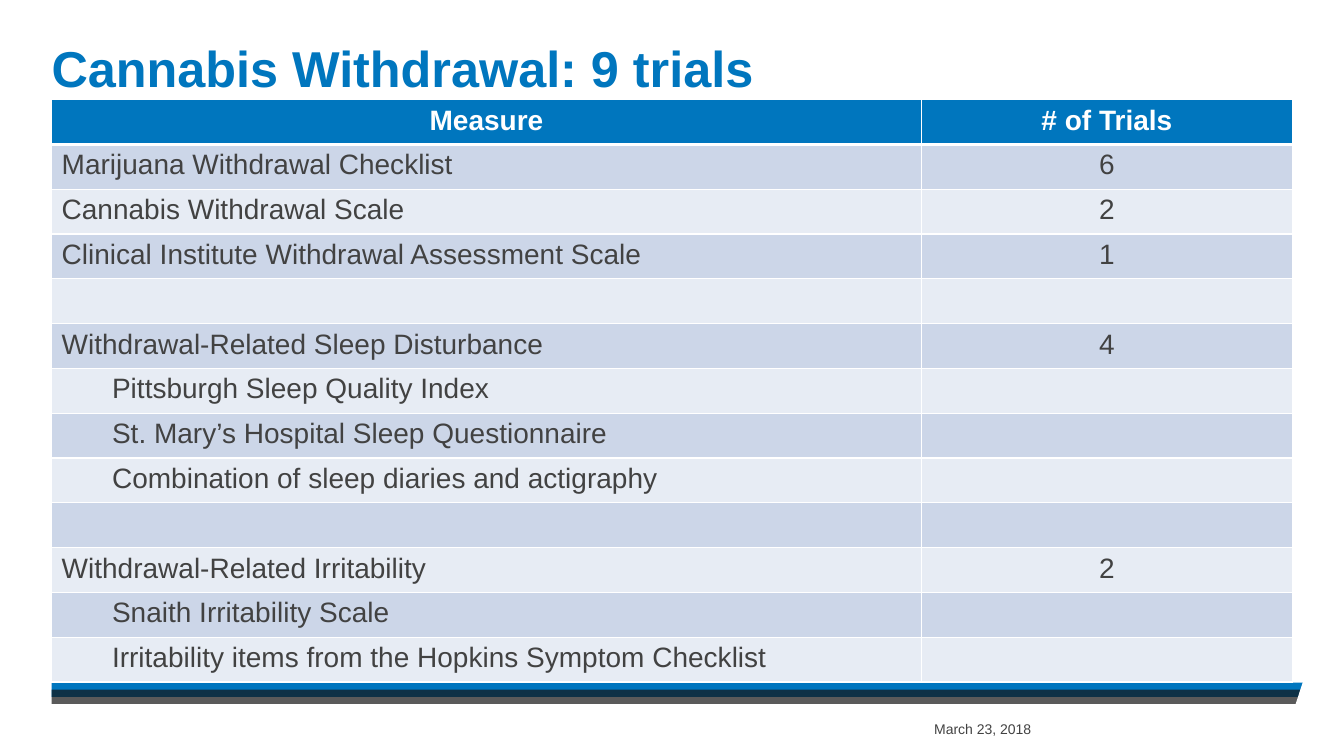
from dataclasses import dataclass

from lxml import etree
from pptx import Presentation
from pptx.dml.color import RGBColor
from pptx.enum.shapes import MSO_SHAPE
from pptx.enum.text import MSO_ANCHOR, PP_ALIGN
from pptx.oxml.ns import qn
from pptx.util import Cm, Pt

RECTANGLE = MSO_SHAPE.RECTANGLE
LEFT, CENTER = PP_ALIGN.LEFT, PP_ALIGN.CENTER
TOP, MIDDLE = MSO_ANCHOR.TOP, MSO_ANCHOR.MIDDLE


@dataclass(frozen=True)
class Theme:
    font: str = "Arial"
    blue: str = "0076BE"
    shade: str = "141414"
    white: str = "FFFFFF"
    ink: str = "424242"
    bands: tuple = ("CCD6E8", "E7ECF4")
    title_size: int = 36
    table_size: int = 20
    date_size: int = 10


THEME = Theme()

HEADER = ("Measure", "# of Trials")
# Measure, number of trials, indent level
MEASURES = [
    ("Marijuana Withdrawal Checklist", "6", 0),
    ("Cannabis Withdrawal Scale", "2", 0),
    ("Clinical Institute Withdrawal Assessment Scale", "1", 0),
    ("", "", 0),
    ("Withdrawal-Related Sleep Disturbance", "4", 0),
    ("Pittsburgh Sleep Quality Index", "", 1),
    ("St. Mary’s Hospital Sleep Questionnaire", "", 1),
    ("Combination of sleep diaries and actigraphy", "", 1),
    ("", "", 0),
    ("Withdrawal-Related Irritability", "2", 0),
    ("Snaith Irritability Scale", "", 1),
    ("Irritability items from the Hopkins Symptom Checklist", "", 1),
]


def write(paragraph, text, size, color, bold=False, align=LEFT):
    paragraph.alignment = align
    run = paragraph.add_run()
    run.text = text
    formats = {"name": THEME.font, "size": Pt(size), "bold": bold}
    for attribute, value in formats.items():
        setattr(run.font, attribute, value)
    run.font.color.rgb = RGBColor.from_string(color)


def add_label(slide, box, anchor):
    """Add an empty text box without margins and return its first paragraph."""
    frame = slide.shapes.add_textbox(*map(Cm, box)).text_frame
    formats = {"word_wrap": True, "vertical_anchor": anchor, "margin_left": 0,
               "margin_top": 0, "margin_right": 0, "margin_bottom": 0}
    for attribute, value in formats.items():
        setattr(frame, attribute, value)
    return frame.paragraphs[0]


def add_title(slide, box):
    title = add_label(slide, box, TOP)
    title.line_spacing = 0.85
    write(title, "Cannabis Withdrawal: 9 trials", THEME.title_size, THEME.blue, bold=True)


def add_date(slide, box):
    date = add_label(slide, box, MIDDLE)
    write(date, "March 23, 2018", THEME.date_size, THEME.ink, align=CENTER)


def paint(shape, color):
    shape.shadow.inherit = False
    shape.fill.solid()
    shape.fill.fore_color.rgb = RGBColor.from_string(color)
    shape.line.fill.background()


def add_footer_stripe(slide, box):
    """Two overlapping bars, the upper one translucent, with a slanted right end."""
    left, top, width, height = box
    bar_height = height * 2 / 3
    for color, offset in ((THEME.blue, 0), (THEME.shade, height / 3)):
        bar = slide.shapes.add_shape(
            RECTANGLE, Cm(left), Cm(top + offset), Cm(width), Cm(bar_height))
        paint(bar, color)
    tint = bar.fill._xPr.find(qn("a:solidFill"))[0]
    etree.SubElement(tint, qn("a:alpha"), val="70000")

    right, bottom = left + width + 0.07, top + height + 0.04
    corners = [(right - 0.1, top - 0.03), (right, top - 0.03), (right, bottom)]
    outline = slide.shapes.build_freeform(Cm(right - 0.3), Cm(bottom))
    outline.add_line_segments([(Cm(x), Cm(y)) for x, y in corners])
    paint(outline.convert_to_shape(), THEME.white)


def style_cell(cell, fill, top_width, bottom_width):
    properties = cell._tc.get_or_add_tcPr()
    widths = {"a:lnL": 1, "a:lnR": 1, "a:lnT": top_width, "a:lnB": bottom_width}
    for side, width in widths.items():
        border = etree.SubElement(properties, qn(side), w=str(Pt(width)))
        solid = etree.SubElement(border, qn("a:solidFill"))
        etree.SubElement(solid, qn("a:srgbClr"), val=THEME.white)
    cell.fill.solid()
    cell.fill.fore_color.rgb = RGBColor.from_string(fill)


def add_measures_table(slide, box):
    left, top, width, height = box
    rows = [(*HEADER, 0), *MEASURES]
    table = slide.shapes.add_table(len(rows), len(HEADER), *map(Cm, box)).table
    measure_width = 21.92
    for column, column_width in zip(table.columns, (measure_width, width - measure_width)):
        column.width = Cm(column_width)

    for index, (measure, trials, level) in enumerate(rows):
        table.rows[index].height = Cm(height / len(rows))
        is_header = index == 0
        fill = THEME.blue if is_header else THEME.bands[(index - 1) % 2]
        color = THEME.white if is_header else THEME.ink
        for column, text in enumerate((measure, trials)):
            cell = table.cell(index, column)
            style_cell(cell, fill, 3 if index == 1 else 1, 3 if is_header else 1)
            if not text:
                continue
            paragraph = cell.text_frame.paragraphs[0]
            align = CENTER if is_header or column else LEFT
            write(paragraph, text, THEME.table_size, color, is_header, align)
            if level and not column:
                paragraph._p.get_or_add_pPr().set("marL", str(Cm(1.27 * level)))


def main():
    presentation = Presentation()
    presentation.slide_width = Cm(33.87)
    presentation.slide_height = Cm(19.05)
    slide = presentation.slides.add_slide(presentation.slide_layouts[6])
    add_footer_stripe(slide, (1.3, 17.2, 31.57, 0.54))
    add_title(slide, (1.3, 1.17, 31.27, 2.67))
    add_date(slide, (22.68, 18.08, 4.17, 0.58))
    add_measures_table(slide, (1.3, 2.51, 31.27, 14.68))
    presentation.save("out.pptx")


if __name__ == "__main__":
    main()
